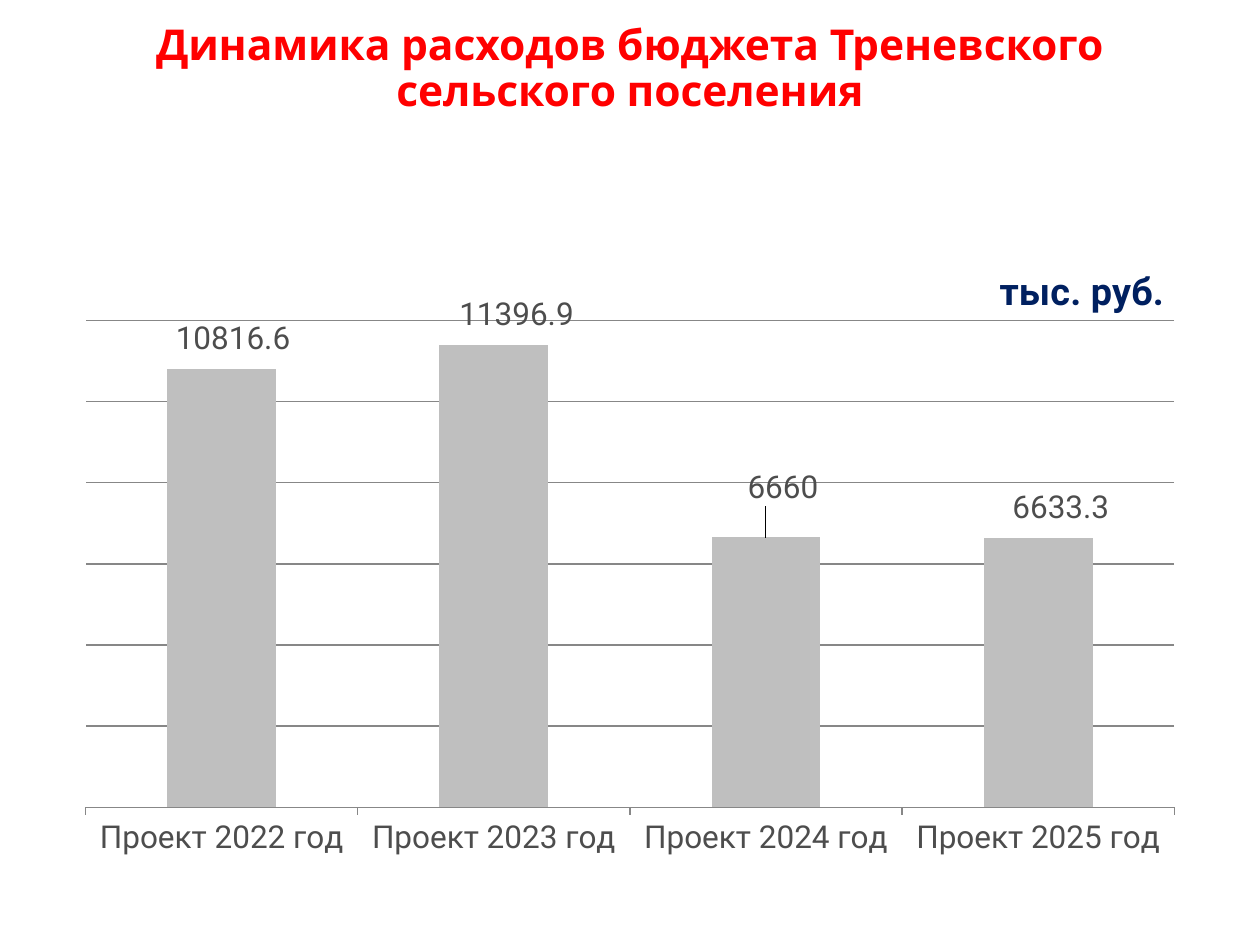
"""Build a slide with a column chart of settlement budget expenditure."""
from lxml.etree import SubElement
from pptx import Presentation
from pptx.chart.data import CategoryChartData
from pptx.dml.color import RGBColor
from pptx.enum.chart import XL_CHART_TYPE, XL_LABEL_POSITION, XL_TICK_LABEL_POSITION, XL_TICK_MARK
from pptx.enum.text import MSO_ANCHOR, MSO_AUTO_SIZE, PP_ALIGN
from pptx.oxml.ns import qn
from pptx.util import Pt

PX = 914400 // 126


def rgb(value):
    return RGBColor.from_string(value)


def place(parent, index, **values):
    for old in parent.findall(qn("c:layout")):
        parent.remove(old)
    layout = SubElement(parent, qn("c:layout"))
    manual = SubElement(layout, qn("c:manualLayout"))
    for tag, value in values.items():
        SubElement(manual, qn(f"c:{tag}")).set("val", str(value))
    parent.insert(index, layout)


prs = Presentation()
prs.slide_width, prs.slide_height = 1260 * PX, 945 * PX
s = prs.slides.add_slide(prs.slide_layouts[5])

title = s.shapes.title
title.left, title.top, title.width, title.height = 126 * PX, 21 * PX, 1008 * PX, 98 * PX
tf = title.text_frame
tf.word_wrap = True
tf.auto_size = MSO_AUTO_SIZE.NONE
tf.vertical_anchor = MSO_ANCHOR.MIDDLE
p = tf.paragraphs[0]
p.alignment = PP_ALIGN.CENTER
p.line_spacing = 0.9
r = p.add_run()
r.text = "Динамика расходов бюджета Треневского сельского поселения"
r.font.name, r.font.size, r.font.bold = "Karla", Pt(24.3), True
r.font.color.rgb = rgb("FF0000")

data = CategoryChartData()
data.categories = [f"Проект {year} год" for year in range(2022, 2026)]
data.add_series("Series 1", (10816.6, 11396.9, 6660, 6633.3))
chart = s.shapes.add_chart(
    XL_CHART_TYPE.COLUMN_CLUSTERED, 63 * PX, 220 * PX, 1134 * PX, 649 * PX, data
).chart
chart.has_legend = False
chart.font.name, chart.font.size = "Roboto", Pt(18)
chart.font.color.rgb = rgb("4D4D4D")

chart.has_title = True
p = chart.chart_title.text_frame.paragraphs[0]
r = p.add_run()
r.text = "тыс. руб."
r.font.name, r.font.size, r.font.bold = "Roboto", Pt(21.6), True
r.font.color.rgb = rgb("002060")
place(chart.chart_title._element, 1, xMode="edge", yMode="edge", x=0.82, y=0.06)

plot = chart.plots[0]
plot.gap_width = 150
plot.vary_by_categories = False
place(plot._element.getparent(), 0, layoutTarget="inner", xMode="edge", yMode="edge",
      x=0.02, y=0.155, w=0.96, h=0.75)

value_axis, category_axis = chart.value_axis, chart.category_axis
value_axis.visible = False
value_axis.minimum_scale, value_axis.maximum_scale, value_axis.major_unit = 0, 12000, 2000
value_axis.has_major_gridlines = True
category_axis.major_tick_mark = XL_TICK_MARK.OUTSIDE
category_axis.tick_label_position = XL_TICK_LABEL_POSITION.LOW
for line in (value_axis.major_gridlines.format.line, category_axis.format.line):
    line.color.rgb = rgb("878787")
    line.width = Pt(0.75)

series = plot.series[0]
series.format.fill.solid()
series.format.fill.fore_color.rgb = rgb("BFBFBF")
labels = series.data_labels
labels.show_value = True
labels.position = XL_LABEL_POSITION.OUTSIDE_END
offsets = [(0.01, -0.01), (0.02, -0.01), (0.015, -0.04), (0.02, -0.01)]
for i in range(len(offsets)):
    series.points[i].data_label.position = XL_LABEL_POSITION.OUTSIDE_END
for label, (x, y) in zip(series._element.iter(qn("c:dLbl")), offsets):
    place(label, 1, x=x, y=y)

prs.save("out.pptx")
